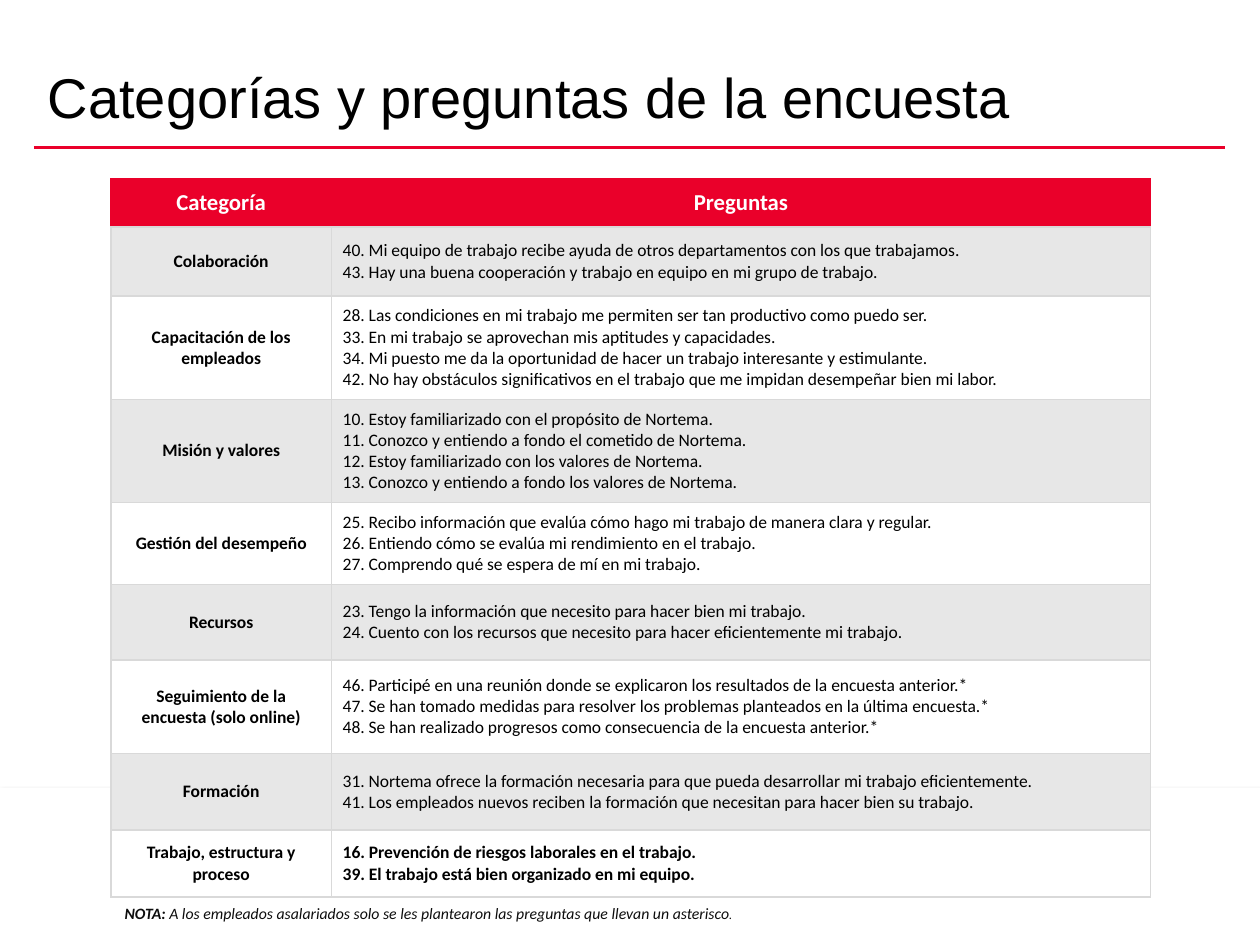
from lxml import etree
from pptx import Presentation
from pptx import util as u
from pptx.dml.color import RGBColor
from pptx.enum import shapes, text
from pptx.oxml import parse_xml
from pptx.oxml.ns import nsdecls, qn

RED = RGBColor(0xEA, 0x00, 0x2A)
GREY = RGBColor(0xD9, 0xD9, 0xD9)
BAND = RGBColor(0xE7, 0xE7, 0xE7)
INK = RGBColor(0x0D, 0x0D, 0x0D)
BLACK = RGBColor(0, 0, 0)
WHITE = RGBColor(0xFF, 0xFF, 0xFF)

HEADINGS = ("Categoría", "Preguntas")
SURVEY = [
    (5.5, "Colaboración", [
        "40. Mi equipo de trabajo recibe ayuda de otros departamentos con los que trabajamos.",
        "43. Hay una buena cooperación y trabajo en equipo en mi grupo de trabajo."]),
    (8.2, "Capacitación de los empleados", [
        "28. Las condiciones en mi trabajo me permiten ser tan productivo como puedo ser.",
        "33. En mi trabajo se aprovechan mis aptitudes y capacidades.",
        "34. Mi puesto me da la oportunidad de hacer un trabajo interesante y estimulante.",
        "42. No hay obstáculos significativos en el trabajo que me impidan desempeñar bien mi labor."]),
    (8.2, "Misión y valores", [
        "10. Estoy familiarizado con el propósito de Nortema.",
        "11. Conozco y entiendo a fondo el cometido de Nortema.",
        "12. Estoy familiarizado con los valores de Nortema.",
        "13. Conozco y entiendo a fondo los valores de Nortema."]),
    (6.5, "Gestión del desempeño", [
        "25. Recibo información que evalúa cómo hago mi trabajo de manera clara y regular.",
        "26. Entiendo cómo se evalúa mi rendimiento en el trabajo.",
        "27. Comprendo qué se espera de mí en mi trabajo."]),
    (6, "Recursos", [
        "23. Tengo la información que necesito para hacer bien mi trabajo.",
        "24. Cuento con los recursos que necesito para hacer eficientemente mi trabajo."]),
    (7.4, "Seguimiento de la encuesta (solo online)", [
        "46. Participé en una reunión donde se explicaron los resultados de la encuesta anterior.*",
        "47. Se han tomado medidas para resolver los problemas planteados en la última encuesta.*",
        "48. Se han realizado progresos como consecuencia de la encuesta anterior.*"]),
    (6.1, "Formación", [
        "31. Nortema ofrece la formación necesaria para que pueda desarrollar mi trabajo eficientemente.",
        "41. Los empleados nuevos reciben la formación que necesitan para hacer bien su trabajo."]),
    (5.3, "Trabajo, estructura y proceso", [
        "16. Prevención de riesgos laborales en el trabajo.",
        "39. El trabajo está bien organizado en mi equipo."]),
]


class SurveySlide:
    COLUMNS, ROWS = 100, 75
    BODY, DISPLAY = "Calibri", "Arial"

    def __init__(self, deck):
        self.deck = deck
        self.page = deck.slides.add_slide(deck.slide_layouts[5])

    def across(self, columns):
        return round(self.deck.slide_width * columns / self.COLUMNS)

    def down(self, rows):
        return round(self.deck.slide_height * rows / self.ROWS)

    def area(self, left, top, width, height):
        return self.across(left), self.down(top), self.across(width), self.down(height)

    def style(self, font, size, color, bold=False, italic=False, name=BODY):
        font.name, font.size, font.bold, font.italic = name, u.Pt(size), bold, italic
        font.color.rgb = color

    def title(self, wording, *area):
        box = self.page.shapes.title
        box.left, box.top, box.width, box.height = self.area(*area)
        frame = box.text_frame
        frame.text = wording
        frame.vertical_anchor = text.MSO_ANCHOR.BOTTOM
        para = frame.paragraphs[0]
        para.alignment = text.PP_ALIGN.LEFT
        para.line_spacing = 0.8
        self.style(para.font, 32, BLACK, name=self.DISPLAY)

    def footer_panel(self, *area):
        panel = self.page.shapes.add_shape(shapes.MSO_SHAPE.RECTANGLE, *self.area(*area))
        panel.fill.solid()
        panel.fill.fore_color.rgb = panel.line.color.rgb = WHITE
        panel.line.width = u.Pt(0.75)
        panel.shadow.inherit = False
        panel.element.spPr.find(qn("a:effectLst")).append(parse_xml(
            f'<a:outerShdw {nsdecls("a")} blurRad="{u.Pt(3.1)}" dist="{u.Pt(1.8)}" '
            'dir="5400000" rotWithShape="0"><a:srgbClr val="000000">'
            '<a:alpha val="35000"/></a:srgbClr></a:outerShdw>'))

    def rule(self, left, right, top):
        line = self.page.shapes.add_connector(
            shapes.MSO_CONNECTOR.STRAIGHT,
            self.across(left), self.down(top), self.across(right), self.down(top))
        line.line.color.rgb = RED
        line.line.width = u.Pt(2)
        etree.SubElement(line.element.spPr, qn("a:effectLst"))

    def note(self, parts, *area):
        box = self.page.shapes.add_textbox(*self.area(*area))
        frame = box.text_frame
        frame.word_wrap = True
        frame.margin_left = frame.margin_right = u.Inches(0.11)
        frame.margin_top = frame.margin_bottom = u.Inches(0.06)
        for wording, size, bold, italic in parts:
            span = frame.paragraphs[0].add_run()
            span.text = wording
            self.style(span.font, size, INK, bold, italic)

    def borders(self, cell, left, right, top, bottom):
        properties = cell._tc.get_or_add_tcPr()
        for index, (side, color) in enumerate(zip("LRTB", (left, right, top, bottom))):
            properties.insert(index, parse_xml(
                f'<a:ln{side} {nsdecls("a")} w="{u.Pt(1)}"><a:solidFill>'
                f'<a:srgbClr val="{color}"/></a:solidFill></a:ln{side}>'))

    def cell(self, cell, lines, size, color, fill, bold, centred, edge):
        cell.fill.solid()
        cell.fill.fore_color.rgb = fill
        cell.vertical_anchor = text.MSO_ANCHOR.MIDDLE
        cell.margin_left = cell.margin_right = u.Inches(0.09)
        cell.margin_top = cell.margin_bottom = u.Inches(0.04)
        cell.text_frame.text = "\n".join(lines)
        for para in cell.text_frame.paragraphs:
            para.alignment = text.PP_ALIGN.CENTER if centred else text.PP_ALIGN.LEFT
            self.style(para.font, size, color, bold)
        self.borders(cell, edge, edge, edge, GREY)

    def table(self, headings, survey, left, top, widths, heading_height):
        heights = [heading_height] + [height for height, _, _ in survey]
        table = self.page.shapes.add_table(
            len(heights), len(widths),
            *self.area(left, top, sum(widths), sum(heights))).table
        table.horz_banding = False
        for column, width in zip(table.columns, widths):
            column.width = self.across(width)
        for row, height in zip(table.rows, heights):
            row.height = self.down(height)
        for column, heading in enumerate(headings):
            self.cell(table.cell(0, column), [heading], 13, WHITE, RED, True, True, RED)
        for row, (_, category, questions) in enumerate(survey, 1):
            fill = BAND if row % 2 else WHITE
            last = row == len(survey)
            self.cell(table.cell(row, 0), [category], 10, BLACK, fill, True, True, GREY)
            self.cell(table.cell(row, 1), questions, 10, BLACK, fill, last, False, GREY)
        for column in range(len(headings)):
            self.top_edge(table.cell(1, column))

    def top_edge(self, cell):
        cell._tc.tcPr.find(qn("a:lnT")).find(".//" + qn("a:srgbClr")).set("val", str(GREY))


def main():
    deck = Presentation()
    deck.slide_width, deck.slide_height = u.Inches(10), u.Inches(7.5)
    slide = SurveySlide(deck)
    slide.footer_panel(0, 62.6, 100, 12.4)
    slide.rule(2.7, 97.2, 11.7)
    slide.title("Categorías y preguntas de la encuesta", 2.8, 0.5, 90, 10.3)
    slide.note([
        ("NOTA: ", 9, True, True),
        ("A los empleados asalariados solo se les plantearon las preguntas que llevan un asterisco",
         9, False, True),
        (".", 7, False, False)], 8.8, 71.1, 73, 3.2)
    slide.table(HEADINGS, SURVEY, 8.8, 14.2, (17.5, 65), 3.8)
    deck.save("out.pptx")


if __name__ == "__main__":
    main()
